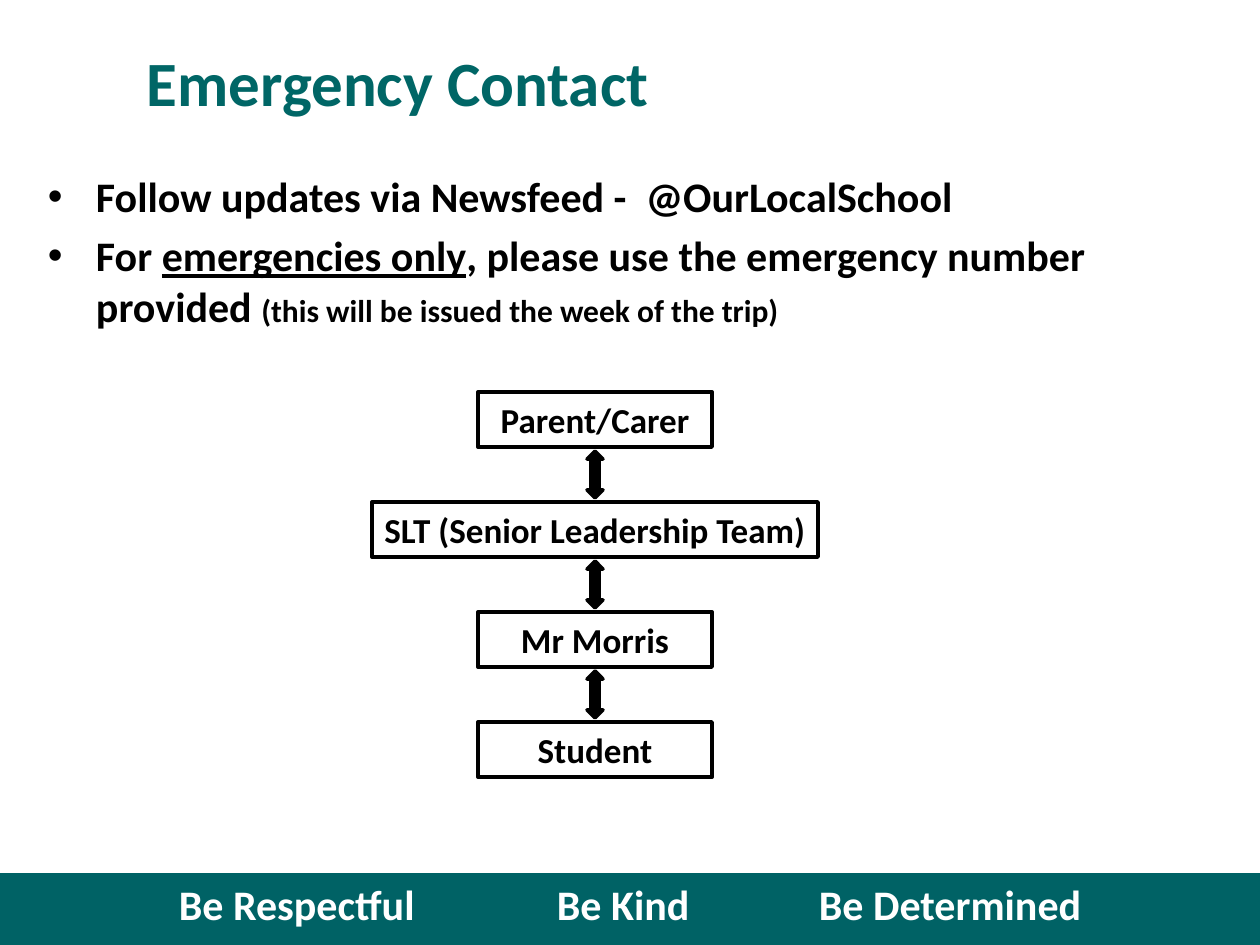
from pptx import Presentation
from pptx.dml.color import RGBColor
from pptx.enum.shapes import MSO_SHAPE as Shape
from pptx.enum.text import MSO_ANCHOR as Anchor, PP_ALIGN as Align
from pptx.oxml.xmlchemy import OxmlElement
from pptx.util import Pt

SCALE = 914400 / 126
BLACK, WHITE, TEAL, DARK_TEAL = "000000", "FFFFFF", "006666", "006265"
INSETS = (13, 6, 13, 6)


def px(length):
    return round(length * SCALE)


def color(hex_text):
    return RGBColor.from_string(hex_text)


def set_all(target, values):
    for name, value in values.items():
        setattr(target, name, value)


def add_block(page, kind, box, fill=None, line=None, line_width=2):
    block = page.shapes.add_shape(kind, *map(px, box))
    block.shadow.inherit = False
    if fill:
        block.fill.solid()
        block.fill.fore_color.rgb = color(fill)
    else:
        block.fill.background()
    if line:
        block.line.color.rgb = color(line)
        block.line.width = Pt(line_width)
    else:
        block.line.fill.background()
    return block


def set_frame(frame, anchor=Anchor.TOP, wrap=True, insets=INSETS):
    sides = ("margin_left", "margin_top", "margin_right", "margin_bottom")
    set_all(frame, dict(zip(sides, map(px, insets))))
    set_all(frame, {"vertical_anchor": anchor, "word_wrap": wrap})


def add_span(para, text, size, ink=BLACK, underline=None):
    span = para.add_run()
    span.text = text
    set_all(span.font, {"name": "Calibri", "size": Pt(size), "bold": True,
                        "underline": underline})
    span.font.color.rgb = color(ink)


def add_bullet(para, indent):
    props = para._p.get_or_add_pPr()
    props.set("marL", str(px(indent)))
    props.set("indent", str(-px(indent)))
    for tag, name, value in (("a:buFont", "typeface", "Arial"),
                             ("a:buChar", "char", "•")):
        element = OxmlElement(tag)
        element.set(name, value)
        props.append(element)


def add_tabs(para, stops):
    tabs = OxmlElement("a:tabLst")
    for stop in stops:
        tab = OxmlElement("a:tab")
        tab.set("pos", str(px(stop)))
        tab.set("algn", "l")
        tabs.append(tab)
    para._p.get_or_add_pPr().append(tabs)


def add_footer(page, box):
    first, *others = (179, 557, 819)
    frame = add_block(page, Shape.RECTANGLE, box, DARK_TEAL).text_frame
    set_frame(frame, insets=(first, 5, 5, 5))
    para = frame.paragraphs[0]
    para.alignment = Align.LEFT
    add_tabs(para, [stop - first for stop in others])
    add_span(para, "Be Respectful\tBe Kind\tBe Determined", 24, WHITE)


def add_title(page, box):
    frame = page.shapes.add_textbox(*map(px, box)).text_frame
    set_frame(frame, Anchor.MIDDLE)
    add_span(frame.paragraphs[0], "Emergency Contact", 36, TEAL)


def add_advice(page, box):
    items = [
        [("Follow updates via Newsfeed -  @OurLocalSchool", 24)],
        [("For ", 24), ("emergencies only", 24, BLACK, True),
         (", please use the emergency number provided ", 24),
         ("(this will be issued the week of the trip)", 18)],
    ]
    frame = page.shapes.add_textbox(*map(px, box)).text_frame
    set_frame(frame)
    for index, spans in enumerate(items):
        para = frame.add_paragraph() if index else frame.paragraphs[0]
        if index:
            para.space_before = Pt(4.8)
        add_bullet(para, 48)
        for span in spans:
            add_span(para, *span)


def add_two_way_arrow(page, center, top):
    """Two overlapping arrows, the upper one turned to point up."""
    for offset, height, turn in ((11, 36, 0), (0, 31, 180)):
        arrow = add_block(page, Shape.DOWN_ARROW,
                          (center - 8, top + offset, 16, height), BLACK, BLACK)
        arrow.rotation = turn


def add_contact_chain(page, box):
    left, top, width, height = box
    center = left + width // 2
    links = [("Parent/Carer", 234), ("SLT (Senior Leadership Team)", width),
             ("Mr Morris", 234), ("Student", 234)]
    link_height = 55
    step = (height - link_height) // (len(links) - 1)
    for index, (label, link_width) in enumerate(links):
        link_top = top + index * step
        link = add_block(page, Shape.RECTANGLE,
                         (center - link_width // 2, link_top, link_width, link_height),
                         line=BLACK, line_width=2.25)
        set_frame(link.text_frame, wrap=False)
        para = link.text_frame.paragraphs[0]
        para.alignment = Align.CENTER
        add_span(para, label, 20)
        if index:
            add_two_way_arrow(page, center, link_top - step + 59)


def main():
    deck = Presentation()
    set_all(deck, {"slide_width": px(1260), "slide_height": px(945)})
    page = deck.slides.add_slide(deck.slide_layouts[6])
    add_footer(page, (0, 873, 1260, 72))
    add_title(page, (134, 28, 1092, 107))
    add_advice(page, (35, 165, 1225, 179))
    add_contact_chain(page, (372, 392, 446, 385))
    deck.save("out.pptx")


if __name__ == "__main__":
    main()
